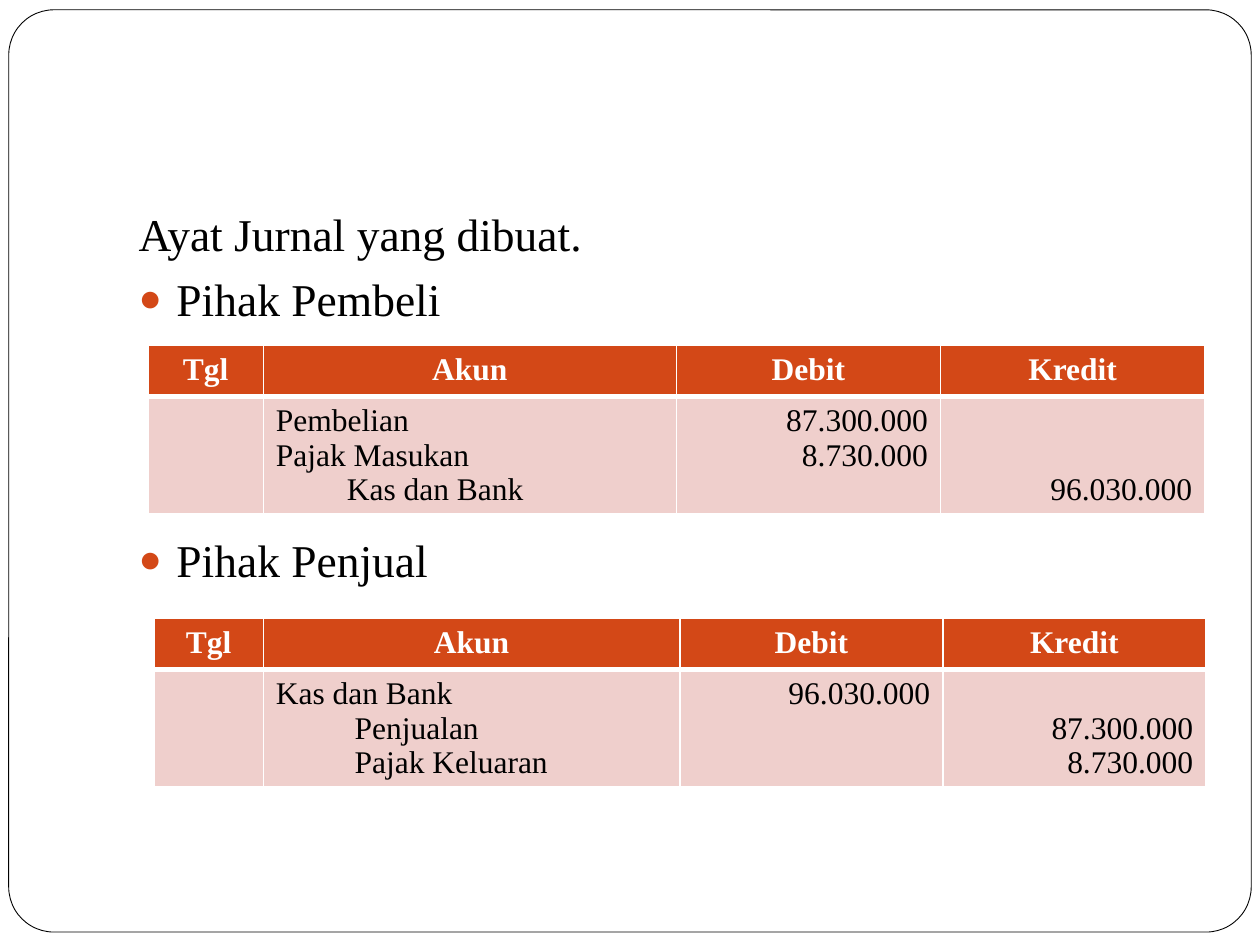
from dataclasses import dataclass

from lxml.etree import SubElement
from pptx import Presentation
from pptx.dml.color import RGBColor
from pptx.enum.shapes import MSO_SHAPE
from pptx.enum.text import MSO_ANCHOR, MSO_AUTO_SIZE, PP_ALIGN
from pptx.oxml.ns import qn
from pptx.util import Pt


@dataclass(frozen=True)
class Theme:
    font: str = "Times New Roman"
    body_size: float = 26
    table_size: float = 18
    accent: str = "D34817"
    tint: str = "EFCFCC"
    black: str = "000000"
    white: str = "FFFFFF"
    frame_line: float = 0.5
    border: float = 1
    header_border: float = 3


@dataclass(frozen=True)
class Item:
    text: str
    space_before: float
    bullet: bool = True


@dataclass(frozen=True)
class Journal:
    left: float
    top: float
    widths: tuple[float, ...]
    accounts: tuple[str, ...]
    debits: tuple[str, ...]
    credits: tuple[str, ...]
    credit_accounts: tuple[str, ...]
    credit_indent: float


THEME = Theme()
HEADERS = ("Tgl", "Akun", "Debit", "Kredit")
ROW_HEIGHTS = (29.2, 67)
BULLET_INDENT = 21.6

ITEMS = (
    Item("Ayat Jurnal yang dibuat.", 5.8, bullet=False),
    Item("Pihak Pembeli", 5.8),
    Item("Pihak Penjual", 118),
)
JOURNALS = (
    Journal(84.5, 197.5, (66, 236, 151, 151),
            ("Pembelian", "Pajak Masukan"), ("87.300.000", "8.730.000"),
            ("96.030.000",), ("Kas dan Bank",), 40.5),
    Journal(88, 353.5, (62.5, 238, 150.3, 150.3),
            ("Kas dan Bank",), ("96.030.000",),
            ("87.300.000", "8.730.000"), ("Penjualan", "Pajak Keluaran"), 45),
)


def add_run(p, text: str, size: float, color: str, bold: bool = False) -> None:
    r = p.add_run()
    r.text = text
    formats = {"name": THEME.font, "size": Pt(size), "bold": bold}
    for name, value in formats.items():
        setattr(r.font, name, value)
    r.font.color.rgb = RGBColor.from_string(color)


def set_bullet(p, shown: bool) -> None:
    pPr = p._p.get_or_add_pPr()
    indent = BULLET_INDENT if shown else 0
    pPr.set("marL", str(Pt(indent)))
    pPr.set("indent", str(-Pt(indent)))
    if not shown:
        SubElement(pPr, qn("a:buNone"))
        return
    color = SubElement(pPr, qn("a:buClr"))
    SubElement(color, qn("a:srgbClr"), val=THEME.accent)
    SubElement(pPr, qn("a:buSzPct"), val="85000")
    SubElement(pPr, qn("a:buChar"), char="●")


def add_frame(slide) -> None:
    sp = slide.shapes.add_shape(MSO_SHAPE.ROUNDED_RECTANGLE,
                                Pt(5), Pt(5.6), Pt(710), Pt(527))
    sp.adjustments[0] = 0.049
    sp.shadow.inherit = False
    sp.fill.solid()
    sp.fill.fore_color.rgb = RGBColor.from_string(THEME.white)
    sp.line.color.rgb = RGBColor.from_string(THEME.black)
    sp.line.width = Pt(THEME.frame_line)
    slide.shapes._spTree.insert(2, sp._element)  # behind the body text


def fill_body(sp, items: tuple[Item, ...]) -> None:
    box = {"left": 72, "top": 114, "width": 612, "height": 360}
    for name, value in box.items():
        setattr(sp, name, Pt(value))
    tf = sp.text_frame
    tf.auto_size = MSO_AUTO_SIZE.NONE
    for i, item in enumerate(items):
        p = tf.add_paragraph() if i else tf.paragraphs[0]
        p.space_before = Pt(item.space_before)
        set_bullet(p, item.bullet)
        add_run(p, item.text, THEME.body_size, THEME.black)


def style_cell(cell, fill: str, borders: dict[str, float]) -> None:
    tcPr = cell._tc.get_or_add_tcPr()
    for side, width in borders.items():
        ln = SubElement(tcPr, qn(f"a:ln{side}"), w=str(Pt(width)))
        solid = SubElement(ln, qn("a:solidFill"))
        SubElement(solid, qn("a:srgbClr"), val=THEME.white)
    cell.fill.solid()
    cell.fill.fore_color.rgb = RGBColor.from_string(fill)


def write_lines(cell, lines: tuple[str, ...], align: PP_ALIGN,
                color: str = THEME.black, bold: bool = False) -> None:
    tf = cell.text_frame
    for i, text in enumerate(lines):
        p = tf.add_paragraph() if i else tf.paragraphs[0]
        p.alignment = align
        add_run(p, text, THEME.table_size, color, bold)


def add_journal(slide, journal: Journal) -> None:
    table = slide.shapes.add_table(
        2, len(HEADERS), Pt(journal.left), Pt(journal.top),
        Pt(sum(journal.widths)), Pt(sum(ROW_HEIGHTS))).table
    table.horz_banding = False
    for row, height in zip(table.rows, ROW_HEIGHTS):
        row.height = Pt(height)

    thin, thick = THEME.border, THEME.header_border
    for c, (header, width) in enumerate(zip(HEADERS, journal.widths)):
        table.columns[c].width = Pt(width)
        head = table.cell(0, c)
        style_cell(head, THEME.accent, {"L": thin, "R": thin, "T": thin, "B": thick})
        write_lines(head, (header,), PP_ALIGN.CENTER, THEME.white, bold=True)
        style_cell(table.cell(1, c), THEME.tint,
                   {"L": thin, "R": thin, "T": thick, "B": thin})

    accounts, debits, credits = (table.cell(1, c) for c in (1, 2, 3))
    write_lines(accounts, journal.accounts + journal.credit_accounts, PP_ALIGN.LEFT)
    for p in accounts.text_frame.paragraphs[len(journal.accounts):]:
        p._p.get_or_add_pPr().set("marL", str(Pt(journal.credit_indent)))
    write_lines(debits, journal.debits, PP_ALIGN.RIGHT)
    write_lines(credits, journal.credits, PP_ALIGN.RIGHT)
    credits.vertical_anchor = MSO_ANCHOR.BOTTOM


def main() -> None:
    prs = Presentation()
    prs.slide_width, prs.slide_height = Pt(720), Pt(540)
    slide = prs.slides.add_slide(prs.slide_layouts[1])
    title = slide.shapes.title._element
    title.getparent().remove(title)
    add_frame(slide)
    fill_body(slide.placeholders[1], ITEMS)
    for journal in JOURNALS:
        add_journal(slide, journal)
    prs.save("out.pptx")


if __name__ == "__main__":
    main()
